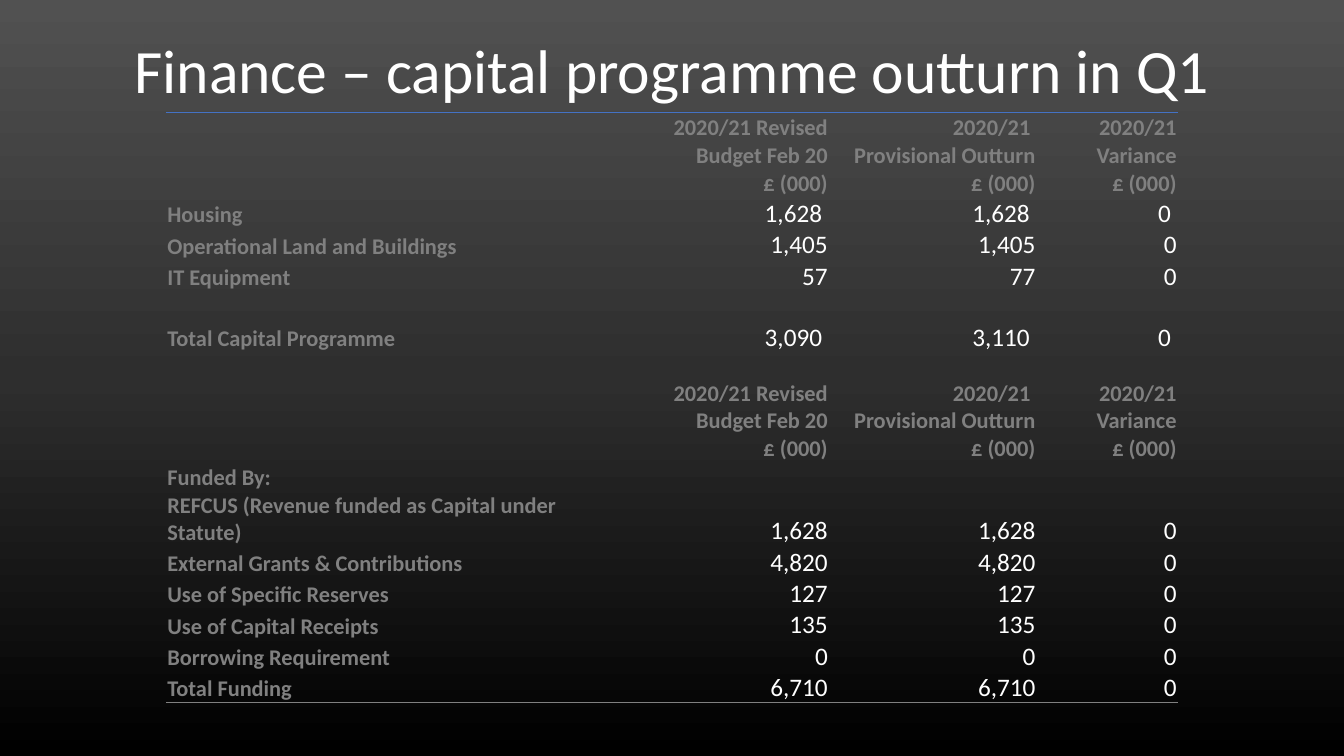
"""Build the capital programme outturn slide."""
from copy import deepcopy

from lxml import etree
from pptx import Presentation
from pptx import util as u
from pptx.dml.color import RGBColor
from pptx.enum import text
from pptx.oxml.ns import qn

FONT = "Calibri"
WHITE, GREY, BLUE = "FFFFFF", "808080", "4472C4"
TITLE = "Finance – capital programme outturn in Q1"
BACKGROUND = [(0, "515151"), (0.5, "2E2E2E"), (1, "000000")]
NO_GRID = "{2D5ABB26-0587-4C30-8999-92F81FD0307C}"
COLS = [4.65, 1.92, 2.06, 1.4]
HEADS = ("", "2020/21 Revised Budget Feb 20", "2020/21 \nProvisional Outturn", "2020/21 Variance")
UNITS = ("",) + ("£ (000)",) * 3
EMPTY = ("",) * 4
HEAD_H, UNIT_H, FIGURE_H, WRAP_H = 0.56, 0.28, 0.31, 0.55
ROWS = [
    (HEAD_H, HEADS),
    (UNIT_H, UNITS),
    (FIGURE_H, ("Housing", "1,628 ", "1,628 ", "0 ")),
    (FIGURE_H, ("Operational Land and Buildings", "1,405", "1,405", "0")),
    (FIGURE_H, ("IT Equipment", "57", "77", "0")),
    (0.3, EMPTY),
    (FIGURE_H, ("Total Capital Programme", "3,090 ", "3,110 ", "0 ")),
    (0.25, EMPTY),
    (HEAD_H, HEADS),
    (UNIT_H, UNITS),
    (UNIT_H, ("Funded By:", "", "", "")),
    (WRAP_H, ("REFCUS (Revenue funded as Capital under Statute)", "1,628", "1,628", "0")),
    (FIGURE_H, ("External Grants & Contributions", "4,820", "4,820", "0")),
    (FIGURE_H, ("Use of Specific Reserves", "127", "127", "0")),
    (FIGURE_H, ("Use of Capital Receipts", "135", "135", "0")),
    (FIGURE_H, ("Borrowing Requirement", "0", "0", "0")),
    (FIGURE_H, ("Total Funding", "6,710", "6,710", "0")),
]


def rgb(value):
    return RGBColor.from_string(value)


def write(tf, words, size=16, color=GREY, bold=False, align="LEFT", anchor="BOTTOM"):
    p = tf.paragraphs[0]
    p.text = words
    p.alignment = getattr(text.PP_ALIGN, align)
    tf.vertical_anchor = getattr(text.MSO_ANCHOR, anchor)
    for r in p.runs:
        r.font.name, r.font.size, r.font.bold = FONT, u.Pt(size), bold
        r.font.color.rgb = rgb(color)
    for br in p._p.findall(qn("a:br")):
        br.append(deepcopy(p.runs[0]._r.rPr))
    if not words:
        etree.SubElement(p._p, qn("a:endParaRPr"), sz="1000")
    return p


def border(cell, side, color, width):
    ln = etree.Element(qn("a:" + side), w=str(u.Pt(width)))
    fill = etree.SubElement(ln, qn("a:solidFill"))
    etree.SubElement(fill, qn("a:srgbClr"), val=color)
    cell._tc.get_or_add_tcPr().insert(0, ln)


def paint_background(s):
    fill = s.background.fill
    fill.gradient()
    fill.gradient_angle = 270
    stops = s._element.find(".//" + qn("a:gsLst"))
    stops.append(deepcopy(stops[0]))
    for stop, (position, color) in zip(fill.gradient_stops, BACKGROUND):
        stop.position = position
        stop.color.rgb = rgb(color)


def add_title(s):
    tf = s.shapes.add_textbox(u.Inches(0.92), 0, u.Inches(11.5), u.Inches(1.45)).text_frame
    tf.word_wrap = True
    p = write(tf, TITLE, size=44, color=WHITE, align="CENTER", anchor="MIDDLE")
    p.line_spacing = 0.9


def add_figures(s):
    height = sum(h for h, _ in ROWS)
    frame = s.shapes.add_table(len(ROWS), len(COLS), u.Inches(1.65), u.Inches(1.12),
                               u.Inches(sum(COLS)), u.Inches(height))
    table = frame.table
    table.first_row = table.horz_banding = False
    table._tbl.tblPr.find(qn("a:tableStyleId")).text = NO_GRID
    for col, width in zip(table.columns, COLS):
        col.width = u.Inches(width)
    for i, (h, words) in enumerate(ROWS):
        table.rows[i].height = u.Inches(h)
        for j, word in enumerate(words):
            cell = table.cell(i, j)
            cell.fill.background()
            cell.margin_left = cell.margin_right = cell.margin_top = u.Inches(0.01)
            cell.margin_bottom = 0
            cell.vertical_anchor = text.MSO_ANCHOR.BOTTOM
            figure = j > 0 and words[0] != ""
            write(cell.text_frame, word, size=18 if figure else 16,
                  color=WHITE if figure else GREY, bold=not figure,
                  align="RIGHT" if j else "LEFT")
            if i == 0:
                border(cell, "lnT", BLUE, 1)
            if i == len(ROWS) - 1:
                border(cell, "lnB", GREY, 0.5)


def main():
    prs = Presentation()
    prs.slide_width, prs.slide_height = u.Inches(13.33), u.Inches(7.5)
    s = prs.slides.add_slide(prs.slide_layouts[6])
    paint_background(s)
    add_title(s)
    add_figures(s)
    prs.save("out.pptx")


if __name__ == "__main__":
    main()
